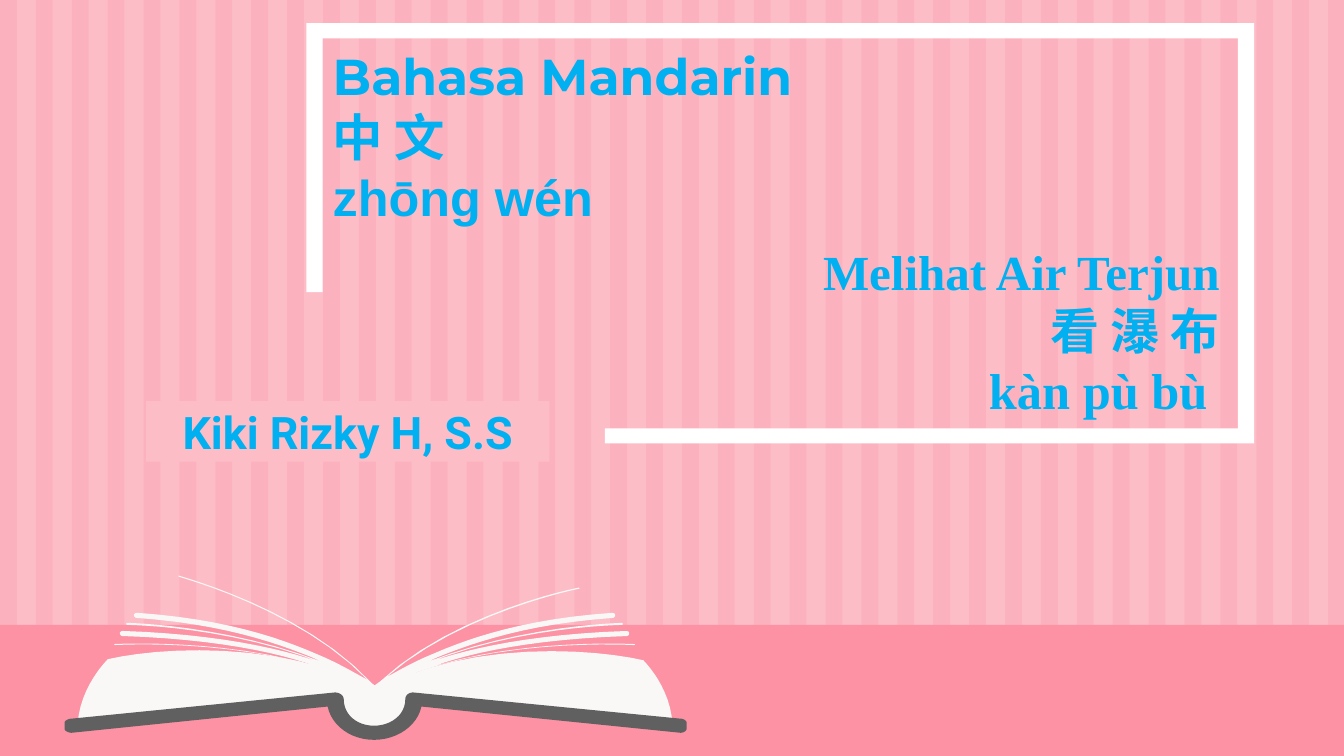
from dataclasses import dataclass

from lxml.etree import SubElement
from pptx import Presentation
from pptx.dml.color import RGBColor
from pptx.enum.shapes import MSO_SHAPE
from pptx.enum.text import MSO_ANCHOR, MSO_AUTO_SIZE, PP_ALIGN
from pptx.oxml.ns import qn
from pptx.util import Inches, Pt


@dataclass(frozen=True)
class Theme:
    wall: str = "FDBDC7"
    table: str = "FC92A3"
    frame: str = "FFFFFF"
    paper: str = "F9F8F7"
    cover: str = "606060"
    text: str = "00B0F0"
    large: int = 36
    topic: int = 35
    author: int = 32
    cjk: str = "Noto Sans CJK SC"


THEME = Theme()
SLIDE_W, SLIDE_H = 13.33, 7.5
STRIPE_COUNT, STRIPE_STEP, STRIPE_W = 38, 0.356, 0.167
SPINE_X = 3.715
CURVE_STEPS = 12

# Outlines in inches: two numbers are a corner, six are a cubic curve.
FRAME = [(3.04, 0.23), (12.44, 0.23), (12.44, 4.4), (6, 4.4), (6, 4.25),
         (12.28, 4.25), (12.28, 0.38), (3.2, 0.38), (3.2, 2.9), (3.04, 2.9)]
PAGES = [(6.38, 6.55), (5.9, 6.44, 4.68, 6.34, 3.73, 6.84),
         (2.77, 6.33, 1.54, 6.43, 1.07, 6.54),
         (1.07, 6.54, 0.79, 6.81, 0.77, 7.19), (3.34, 6.91),
         (3.34, 7.09, 3.51, 7.24, 3.72, 7.24),
         (3.93, 7.24, 4.11, 7.1, 4.11, 6.92), (6.67, 7.2),
         (6.66, 6.82, 6.38, 6.55, 6.38, 6.55)]
COVER = [(3.71, 7.34), (3.48, 7.34, 3.29, 7.2, 3.25, 7.01), (0.71, 7.27),
         (0.68, 7.27, 0.64, 7.25, 0.64, 7.23), (0.64, 7.17),
         (0.64, 7.15, 0.68, 7.13, 0.71, 7.13), (3.32, 6.87),
         (3.37, 6.87, 3.41, 6.9, 3.41, 6.94),
         (3.41, 7.09, 3.54, 7.2, 3.71, 7.2),
         (3.88, 7.2, 4.02, 7.09, 4.02, 6.94),
         (4.02, 6.9, 4.05, 6.87, 4.1, 6.87), (6.75, 7.13),
         (6.78, 7.13, 6.81, 7.15, 6.81, 7.17), (6.81, 7.23),
         (6.81, 7.25, 6.78, 7.27, 6.75, 7.27), (4.18, 7.01),
         (4.14, 7.2, 3.94, 7.34, 3.71, 7.34)]
LOWER_LEAVES = [(6.3, 6.39), (6.28, 6.39, 5.22, 6.33, 4.3, 6.61),
                (4.68, 6.47, 5.31, 6.34, 6.22, 6.31),
                (6.25, 6.3, 6.25, 6.26, 6.21, 6.26),
                (5.3, 6.29, 4.66, 6.43, 4.29, 6.56), (4.18, 6.6),
                (5.13, 6.21, 6.16, 6.2, 6.17, 6.2), (6.18, 6.19), (6.17, 6.18),
                (6.16, 6.18, 5.17, 6.2, 4.23, 6.57), (4.34, 6.52),
                (4.71, 6.37, 5.24, 6.19, 6.08, 6.13),
                (6.11, 6.12, 6.11, 6.08, 6.07, 6.08),
                (5.22, 6.14, 4.68, 6.32, 4.31, 6.48),
                (4.09, 6.57, 3.94, 6.66, 3.83, 6.72)]
RIGHT_TOP_LEAF = [(4.58, 6.07, 5.74, 5.84, 5.75, 5.84), (5.74, 5.83),
                  (5.73, 5.83, 4.51, 6.07, 3.77, 6.76)]
LEFT_TOP_LEAF = [(3.78, 6.75), (4.48, 6.03, 5.65, 5.73, 5.66, 5.72),
                 (5.66, 5.71), (5.64, 5.72, 4.42, 6.04, 3.74, 6.78)]
LEAF_ROOT = [(3.7, 6.81), (3.69, 6.84), (3.73, 6.88),
             (3.73, 6.87, 3.87, 6.78, 4.16, 6.66),
             (5.11, 6.33, 6.28, 6.4, 6.29, 6.4)]


def flatten(outline):
    """Turn corners and cubic curves into a list of points."""
    points = []
    for part in outline:
        if len(part) == 2:
            points.append(part)
            continue
        start, c1, c2, end = points[-1], part[:2], part[2:4], part[4:]
        for i in range(1, CURVE_STEPS + 1):
            t = i / CURVE_STEPS
            u = 1 - t
            points.append(tuple(
                u**3 * a + 3 * u * u * t * b + 3 * u * t * t * c + t**3 * d
                for a, b, c, d in zip(start, c1, c2, end)))
    return points


def paint(shape, color):
    shape.shadow.inherit = False
    shape.fill.solid()
    shape.fill.fore_color.rgb = RGBColor.from_string(color)
    shape.line.fill.background()
    return shape


def add_outline(s, contours, color):
    builder = None
    for contour in contours:
        first, *rest = [(Inches(x), Inches(y)) for x, y in contour]
        if builder is None:
            builder = s.shapes.build_freeform(*first, scale=1.0)
        else:
            builder.move_to(*first)
        builder.add_line_segments(rest, close=True)
    return paint(builder.convert_to_shape(), color)


def add_box(s, left, top, width, height, color):
    return paint(s.shapes.add_shape(MSO_SHAPE.RECTANGLE, Inches(left), Inches(top),
                                    Inches(width), Inches(height)), color)


def add_stripes(s):
    lefts = [i * STRIPE_STEP for i in range(STRIPE_COUNT)]
    stripes = add_outline(s, [[(x, 0), (x + STRIPE_W, 0), (x + STRIPE_W, SLIDE_H),
                               (x, SLIDE_H)] for x in lefts], THEME.table)
    color = stripes.fill._xPr.find(qn("a:solidFill"))[0]
    SubElement(color, qn("a:alpha"), val="24000")


def add_book(s):
    def mirror(points):
        return [(2 * SPINE_X - x, y) for x, y in points]

    right = flatten(LOWER_LEAVES + RIGHT_TOP_LEAF + LEAF_ROOT)
    left = mirror(flatten(LOWER_LEAVES + LEFT_TOP_LEAF + LEAF_ROOT))
    parts = [(flatten(PAGES), THEME.paper), (flatten(COVER), THEME.cover),
             (right, THEME.paper), (left, THEME.paper)]
    s.shapes.add_group_shape([add_outline(s, [points], color)
                              for points, color in parts])


def write(shape, lines, align):
    """Fill a shape with one paragraph per (text, font, size)."""
    tf = shape.text_frame
    tf.word_wrap = True
    tf.auto_size = MSO_AUTO_SIZE.NONE
    tf.vertical_anchor = MSO_ANCHOR.MIDDLE
    tf.text = "\n".join(text for text, _, _ in lines)
    for p, (_, font, size) in zip(tf.paragraphs, lines):
        p.alignment = align
        p.font.name = font
        p.font.size = Pt(size)
        p.font.bold = True
        p.font.color.rgb = RGBColor.from_string(THEME.text)
        SubElement(p.font._element, qn("a:ea"), typeface=THEME.cjk)


def place_title(s, left, top, width, height, lines):
    """Move the title in front of the backdrop and write it."""
    title = s.shapes.title
    title.element.getparent().append(title.element)
    title.left, title.top = Inches(left), Inches(top)
    title.width, title.height = Inches(width), Inches(height)
    write(title, lines, PP_ALIGN.LEFT)


def main():
    prs = Presentation()
    prs.slide_width, prs.slide_height = Inches(SLIDE_W), Inches(SLIDE_H)
    s = prs.slides.add_slide(prs.slide_layouts.get_by_name("Title Only"))
    s.background.fill.solid()
    s.background.fill.fore_color.rgb = RGBColor.from_string(THEME.wall)

    add_stripes(s)
    add_box(s, 0, 6.2, SLIDE_W, 1.3, THEME.table)
    place_title(s, 3.2, 0.39, 8.29, 1.92, [
        ("Bahasa Mandarin", "Montserrat", THEME.large),
        ("中 文", THEME.cjk, THEME.large),
        ("zhōng wén", "Arial", THEME.large)])
    topic = s.shapes.add_textbox(Inches(5.53), Inches(2.34), Inches(6.67), Inches(1.88))
    write(topic, [("Melihat Air Terjun", "Times New Roman", THEME.topic),
                  ("看 瀑 布", "Times New Roman", THEME.topic),
                  ("kàn pù bù ", "Times New Roman", THEME.large)], PP_ALIGN.RIGHT)
    add_outline(s, [FRAME], THEME.frame)
    add_book(s)
    author = add_box(s, 1.45, 3.98, 4, 0.6, THEME.wall)
    write(author, [("Kiki Rizky H, S.S", "Roboto", THEME.author)], PP_ALIGN.CENTER)
    prs.save("out.pptx")


if __name__ == "__main__":
    main()
